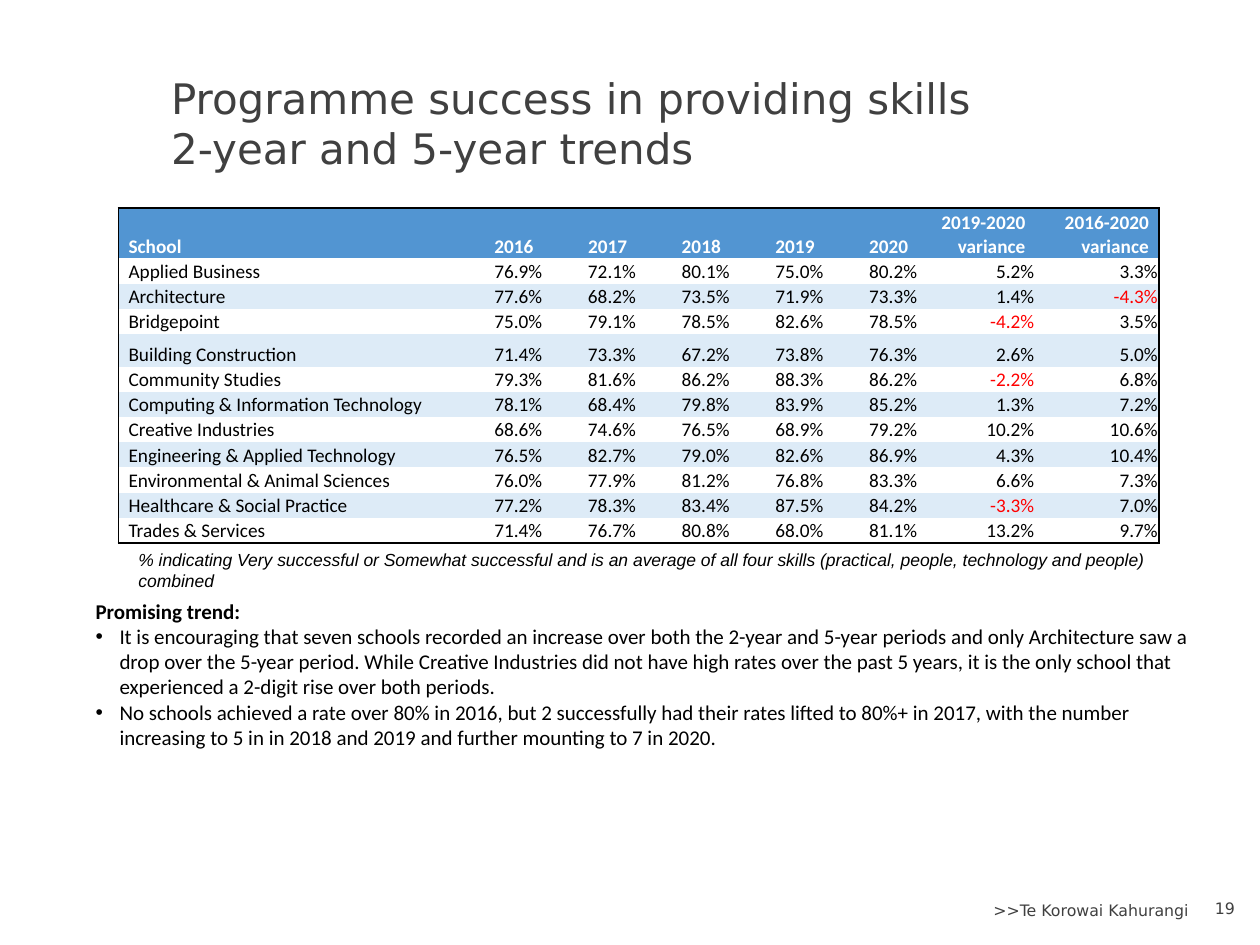
import dataclasses

import lxml.etree
import pptx
import pptx.dml.color
import pptx.enum.text
import pptx.oxml
import pptx.oxml.ns
import pptx.util

Inches = pptx.util.Inches
Pt = pptx.util.Pt
Align = pptx.enum.text.PP_ALIGN
Anchor = pptx.enum.text.MSO_ANCHOR
qn = pptx.oxml.ns.qn


@dataclasses.dataclass(frozen=True)
class Theme:
    grey: str = "404040"
    black: str = "000000"
    white: str = "FFFFFF"
    negative: str = "FF0000"
    header: str = "5295D2"
    band: str = "DDEBF7"
    heading_font: str = "DejaVu Sans"
    note_font: str = "Arial"
    body_font: str = "Calibri"
    title_size: int = 24
    body_size: int = 12
    table_size: int = 11
    note_size: int = 10
    footer_size: int = 9


theme = Theme()


def write(paragraph, text, font=theme.body_font, size=theme.body_size, color=theme.black,
          bold=False, italic=False, align=Align.LEFT, bullet=None):
    paragraph.text = text
    paragraph.alignment = align
    if bullet:
        properties = paragraph._p.get_or_add_pPr()
        properties.set("marL", str(Inches(0.19)))
        properties.set("indent", str(-Inches(0.19)))
        lxml.etree.SubElement(properties, qn("a:buFont")).set("typeface", "Arial")
        lxml.etree.SubElement(properties, qn("a:buChar")).set("char", bullet)
    for run in paragraph.runs:
        run.font.name = font
        run.font.size = Pt(size)
        run.font.bold = bold
        run.font.italic = italic
        run.font.color.rgb = pptx.dml.color.RGBColor.from_string(color)


def add_frame(left, top, width, height, anchor=Anchor.TOP):
    frame = slide.shapes.add_textbox(Inches(left), Inches(top), Inches(width), Inches(height)).text_frame
    frame.word_wrap = True
    frame.vertical_anchor = anchor
    return frame


presentation = pptx.Presentation()
presentation.slide_width = Inches(10)
presentation.slide_height = Inches(7.5)
slide = presentation.slides.add_slide(presentation.slide_layouts[6])

title = add_frame(1.26, 0.54, 7.87, 0.87, Anchor.MIDDLE)
write(title.paragraphs[0], "Programme success in providing skills \v2-year and 5-year trends",
      font=theme.heading_font, size=theme.title_size, color=theme.grey)

footer = add_frame(5.38, 7.1, 4.15, 0.25, Anchor.MIDDLE)
page_number = add_frame(9.44, 7.08, 0.46, 0.25, Anchor.MIDDLE)
for frame, text in [(footer, ">>Te Korowai Kahurangi"), (page_number, "19")]:
    write(frame.paragraphs[0], text, font=theme.heading_font, size=theme.footer_size,
          color=theme.grey, align=Align.RIGHT)

footnote = add_frame(1, 4.31, 8.4, 0.38)
write(footnote.paragraphs[0],
      "% indicating Very successful or Somewhat successful and is an average of all four skills "
      "(practical, people, technology and people) combined",
      font=theme.note_font, size=theme.note_size, italic=True)

success_rates = [
    ("School", "2016", "2017", "2018", "2019", "2020", "2019-2020 variance", "2016-2020 variance"),
    ("Applied Business", "76.9%", "72.1%", "80.1%", "75.0%", "80.2%", "5.2%", "3.3%"),
    ("Architecture", "77.6%", "68.2%", "73.5%", "71.9%", "73.3%", "1.4%", "-4.3%"),
    ("Bridgepoint", "75.0%", "79.1%", "78.5%", "82.6%", "78.5%", "-4.2%", "3.5%"),
    ("Building Construction", "71.4%", "73.3%", "67.2%", "73.8%", "76.3%", "2.6%", "5.0%"),
    ("Community Studies", "79.3%", "81.6%", "86.2%", "88.3%", "86.2%", "-2.2%", "6.8%"),
    ("Computing & Information Technology", "78.1%", "68.4%", "79.8%", "83.9%", "85.2%", "1.3%", "7.2%"),
    ("Creative Industries", "68.6%", "74.6%", "76.5%", "68.9%", "79.2%", "10.2%", "10.6%"),
    ("Engineering & Applied Technology", "76.5%", "82.7%", "79.0%", "82.6%", "86.9%", "4.3%", "10.4%"),
    ("Environmental & Animal Sciences", "76.0%", "77.9%", "81.2%", "76.8%", "83.3%", "6.6%", "7.3%"),
    ("Healthcare & Social Practice", "77.2%", "78.3%", "83.4%", "87.5%", "84.2%", "-3.3%", "7.0%"),
    ("Trades & Services", "71.4%", "76.7%", "80.8%", "68.0%", "81.1%", "13.2%", "9.7%"),
]
column_widths = [2.63] + [3.72 / 5] * 5 + [0.93, 0.98]
row_heights = [0.4] + [0.2] * 3 + [0.26] + [0.2] * 7
last_row = len(row_heights) - 1
last_column = len(column_widths) - 1

rates = slide.shapes.add_table(len(row_heights), len(column_widths), Inches(0.94), Inches(1.65),
                               Inches(sum(column_widths)), Inches(sum(row_heights))).table
rates.first_row = False
rates.horz_banding = False
rates._tbl.tblPr.find(qn("a:tableStyleId")).text = "{2D5ABB26-0587-4C30-8999-92F81FD0307C}"
for column, width in zip(rates.columns, column_widths):
    column.width = Inches(width)
for row, height in zip(rates.rows, row_heights):
    row.height = Inches(height)

for row_index, values in enumerate(success_rates):
    for column_index, value in enumerate(values):
        cell = rates.cell(row_index, column_index)
        is_header = row_index == 0
        is_school = column_index == 0
        cell.vertical_anchor = Anchor.BOTTOM
        cell.margin_left = cell.margin_right = Inches(0.08 if is_header or is_school else 0.01)
        cell.margin_top = Inches(0.01)
        cell.margin_bottom = 0
        outer_edges = {"a:lnL": is_school, "a:lnR": column_index == last_column,
                       "a:lnT": is_header, "a:lnB": row_index == last_row}
        for edge, is_outer in outer_edges.items():
            if is_outer:
                border = lxml.etree.SubElement(cell._tc.get_or_add_tcPr(), qn(edge), w=str(Pt(1)))
                line_fill = lxml.etree.SubElement(border, qn("a:solidFill"))
                lxml.etree.SubElement(line_fill, qn("a:srgbClr"), val=theme.black)
        if is_header or row_index % 2 == 0:
            cell.fill.solid()
            cell.fill.fore_color.rgb = pptx.dml.color.RGBColor.from_string(
                theme.header if is_header else theme.band)
        else:
            cell.fill.background()
        body_color = theme.negative if value.startswith("-") else theme.black
        write(cell.text_frame.paragraphs[0], value, size=theme.table_size, bold=is_header,
              color=theme.white if is_header else body_color,
              align=Align.LEFT if is_school else Align.RIGHT)

findings = add_frame(0.66, 4.7, 9.01, 1.31)
write(findings.paragraphs[0], "Promising trend:", bold=True)
for finding in [
    "It is encouraging that seven schools recorded an increase over both the 2-year and 5-year periods "
    "and only Architecture saw a drop over the 5-year period. While Creative Industries did not have high "
    "rates over the past 5 years, it is the only school that experienced a 2-digit rise over both periods.",
    "No schools achieved a rate over 80% in 2016, but 2 successfully had their rates lifted to 80%+ in 2017, "
    "with the number increasing to 5 in in 2018 and 2019 and further mounting to 7 in 2020.",
]:
    write(findings.add_paragraph(), finding, bullet="•")

presentation.save("out.pptx")
